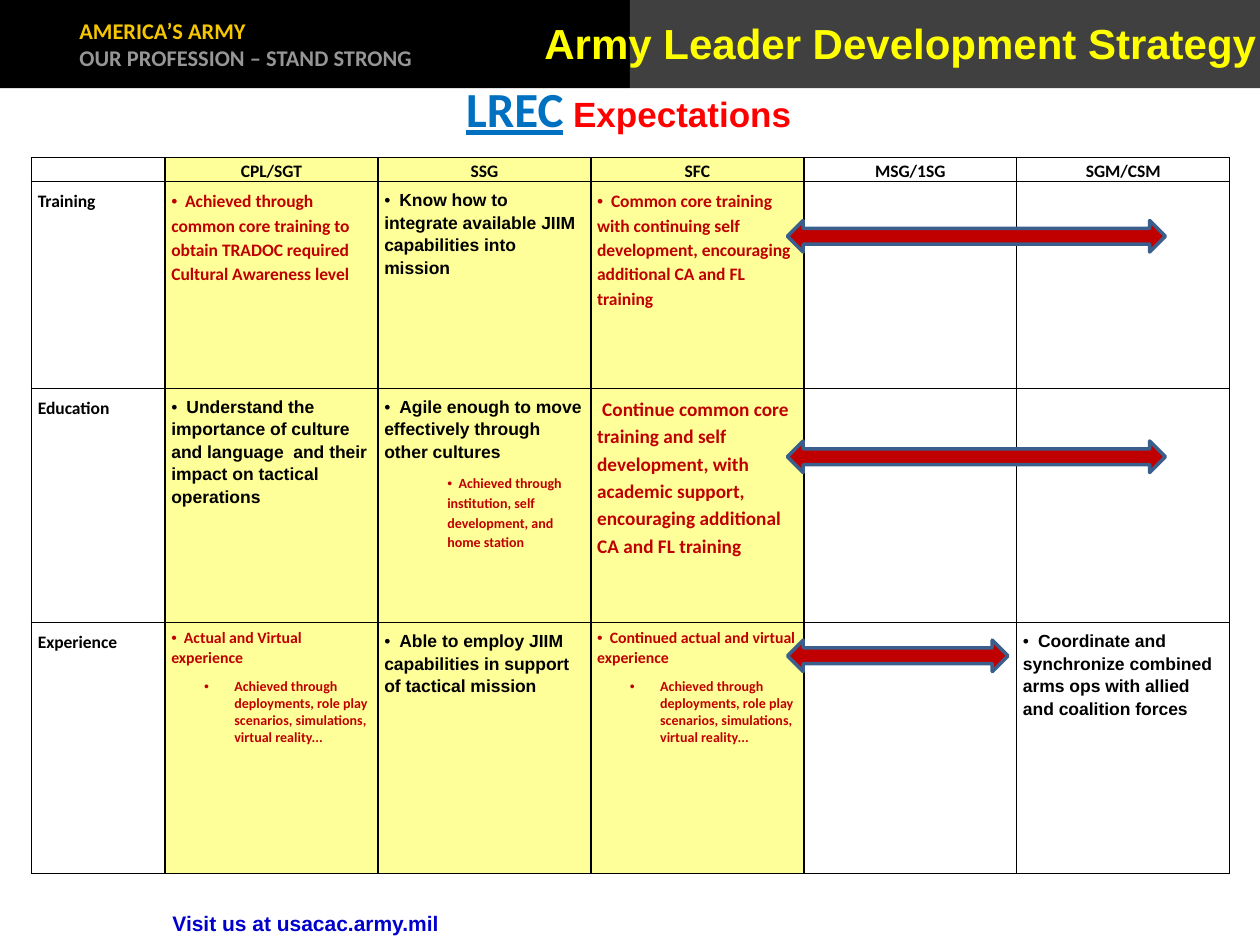
from lxml import etree
from pptx import Presentation
from pptx import util as u
from pptx.dml.color import RGBColor
from pptx.enum import shapes, text
from pptx.oxml.ns import qn

Inches, Pt = u.Inches, u.Pt
BLACK = RGBColor(0x00, 0x00, 0x00)
CHARCOAL = RGBColor(0x40, 0x40, 0x40)
GOLD = RGBColor(0xF6, 0xC7, 0x00)
GRAY = RGBColor(0x96, 0x96, 0x96)
YELLOW = RGBColor(0xFF, 0xFF, 0x00)
BLUE = RGBColor(0x00, 0x70, 0xC0)
RED = RGBColor(0xFF, 0x00, 0x00)
NAVY = RGBColor(0x00, 0x00, 0xCC)
PALE_YELLOW = RGBColor(0xFF, 0xFF, 0x99)
DARK_RED = RGBColor(0xC0, 0x00, 0x00)
STEEL = RGBColor(0x3A, 0x5F, 0x8C)


def add_text(paragraph, words, size, font, color):
    run = paragraph.add_run()
    run.text = words
    run.font.size, run.font.name, run.font.bold = Pt(size), font, True
    run.font.color.rgb = color
    return run


def set_bullet(paragraph, margin, indent, tab=None):
    ppr = paragraph._p.get_or_add_pPr()
    ppr.set("marL", str(Inches(margin)))
    ppr.set("indent", str(Inches(indent)))
    etree.SubElement(ppr, qn("a:buFont"), typeface="Arial")
    etree.SubElement(ppr, qn("a:buChar"), char="•")
    if tab:
        stops = etree.SubElement(ppr, qn("a:tabLst"))
        etree.SubElement(stops, qn("a:tab"), pos=str(Inches(tab)), algn="l")


prs = Presentation()
prs.slide_width, prs.slide_height = Inches(10), Inches(7.5)
slide = prs.slides.add_slide(prs.slide_layouts[6])

# Header band
for left, color, lines in [
    (0, BLACK, [("AMERICA’S ARMY", GOLD), ("OUR PROFESSION – STAND STRONG", GRAY)]),
    (5, CHARCOAL, []),
]:
    band = slide.shapes.add_shape(shapes.MSO_SHAPE.RECTANGLE,
                                  Inches(left), 0, Inches(5), Inches(0.7))
    band.shadow.inherit = False
    band.fill.solid()
    band.fill.fore_color.rgb = color
    band.line.fill.background()
    frame = band.text_frame
    frame.margin_left = Inches(0.63)
    frame.vertical_anchor = text.MSO_ANCHOR.MIDDLE
    for i, (words, ink) in enumerate(lines):
        motto = frame.add_paragraph() if i else frame.paragraphs[0]
        motto.alignment = text.PP_ALIGN.LEFT
        add_text(motto, words, 12.8, "Calibri", ink)

# Title and subtitle
heading = slide.shapes.add_textbox(Inches(-0.15), Inches(0.09),
                                   Inches(10.28), Inches(1.06)).text_frame
heading.word_wrap = True
heading.margin_left = heading.margin_right = Inches(0.16)
title = heading.paragraphs[0]
title.alignment = text.PP_ALIGN.RIGHT
add_text(title, "Army Leader Development Strategy", 24, "Arial", YELLOW)
subtitle = heading.add_paragraph()
subtitle.alignment = text.PP_ALIGN.CENTER
subtitle.space_before = Pt(6)
add_text(subtitle, "LREC", 28, "Calibri", BLUE).font.underline = True
add_text(subtitle, " Expectations", 20, "Arial", RED)

# Expectations by rank: each entry is (words, kind)
DEPLOYMENTS = ("Achieved through deployments, role play scenarios, simulations, "
               "virtual reality...", "hanging")
ranks = ["", "CPL/SGT", "SSG", "SFC", "MSG/1SG", "SGM/CSM"]
expectations = [
    [[(rank, "rank")] if rank else [] for rank in ranks],
    [[("Training", "label")],
     [("Achieved through common core training to obtain TRADOC required "
       "Cultural Awareness level", "red")],
     [("Know how to integrate available JIIM capabilities into mission", "black")],
     [("Common core training with continuing self development, encouraging "
       "additional CA and FL training", "red")], [], []],
    [[("Education", "label")],
     [("Understand the importance of culture and language  and their impact on "
       "tactical operations", "black")],
     [("Agile enough to move effectively through other cultures", "black"),
      ("Achieved through institution, self development, and home station", "sub")],
     [("Continue common core training and self development, with academic support, "
       "encouraging additional CA and FL training", "plain")], [], []],
    [[("Experience", "label")],
     [("Actual and Virtual experience", "small"), DEPLOYMENTS],
     [("Able to employ JIIM capabilities in support of tactical mission", "black")],
     [("Continued actual and virtual experience", "small"), DEPLOYMENTS], [],
     [("Coordinate and synchronize combined arms ops with allied and coalition forces",
       "black")]],
]
# kind: size, font, colour, line spacing, bullet (margin, indent, tab stop)
STYLES = {
    "rank": (10, "Calibri", BLACK, 1.15, None),
    "label": (10, "Calibri", BLACK, 1.15, None),
    "red": (10, "Calibri", DARK_RED, 1.15, (0, 0, 0.11)),
    "black": (10, "Arial", BLACK, 1.15, (0, 0, 0.12)),
    "small": (9, "Calibri", DARK_RED, 1, (0, 0, 0.1)),
    "sub": (8, "Calibri", DARK_RED, 1.15, (0.5, 0, 0.59)),
    "hanging": (8, "Calibri", DARK_RED, 1, (0.5, -0.24)),
    "plain": (11, "Calibri", DARK_RED, 1.15, None),
}

table = slide.shapes.add_table(4, 6, Inches(0.25), Inches(1.25),
                               Inches(9.5), Inches(5.68)).table
table.first_row = table.horz_banding = False
for i, column in enumerate(table.columns):
    column.width = Inches(1.69 if i else 1.06)
for row, height in zip(table.rows, [0.19, 1.64, 1.86, 1.99]):
    row.height = Inches(height)

for r, row_entries in enumerate(expectations):
    for c, entries in enumerate(row_entries):
        cell = table.cell(r, c)
        side, edge = (0.05, 0.05) if r else (0.01, 0)
        cell.margin_left = cell.margin_right = Inches(side)
        cell.margin_top = cell.margin_bottom = Inches(edge)
        cell.vertical_anchor = text.MSO_ANCHOR.TOP if r else text.MSO_ANCHOR.MIDDLE

        # Borders come before the fill in the cell properties
        props = cell._tc.get_or_add_tcPr()
        for border in ("a:lnL", "a:lnR", "a:lnT", "a:lnB"):
            line = etree.SubElement(props, qn(border), w=str(Pt(1)))
            solid = etree.SubElement(line, qn("a:solidFill"))
            etree.SubElement(solid, qn("a:srgbClr"), val=str(BLACK))
        if 1 <= c <= 3:
            cell.fill.solid()
            cell.fill.fore_color.rgb = PALE_YELLOW
        else:
            cell.fill.background()

        frame = cell.text_frame
        if not entries:
            etree.SubElement(frame.paragraphs[0]._p, qn("a:endParaRPr"), sz="1000")
        for i, (words, kind) in enumerate(entries):
            size, font, color, spacing, bullet = STYLES[kind]
            entry = frame.add_paragraph() if i else frame.paragraphs[0]
            entry.line_spacing = spacing
            if i:
                entry.space_before = Pt(6)
            if kind == "rank":
                entry.alignment = text.PP_ALIGN.CENTER
            if kind == "plain":
                entry._p.get_or_add_pPr().set("indent", str(Inches(0.04)))
            if bullet:
                set_bullet(entry, *bullet)
                if len(bullet) == 3:
                    words = "\t" + words
            add_text(entry, words, size, font, color)

# Arrows carrying expectations on to the senior ranks
for top, width in [(1.75, 3), (3.5, 3), (5.08, 1.75)]:
    arrow = slide.shapes.add_shape(shapes.MSO_SHAPE.LEFT_RIGHT_ARROW, Inches(6.25),
                                   Inches(top), Inches(width), Inches(0.25))
    arrow.shadow.inherit = False
    arrow.fill.solid()
    arrow.fill.fore_color.rgb = DARK_RED
    arrow.line.color.rgb = STEEL
    arrow.line.width = Pt(2)

# Footer
footer = slide.shapes.add_textbox(Inches(1.27), Inches(7.18),
                                  Inches(4.09), Inches(0.3)).text_frame
footer.word_wrap = True
add_text(footer.paragraphs[0], "Visit us at usacac.army.mil", 12, "Arial", NAVY)

prs.save("out.pptx")
